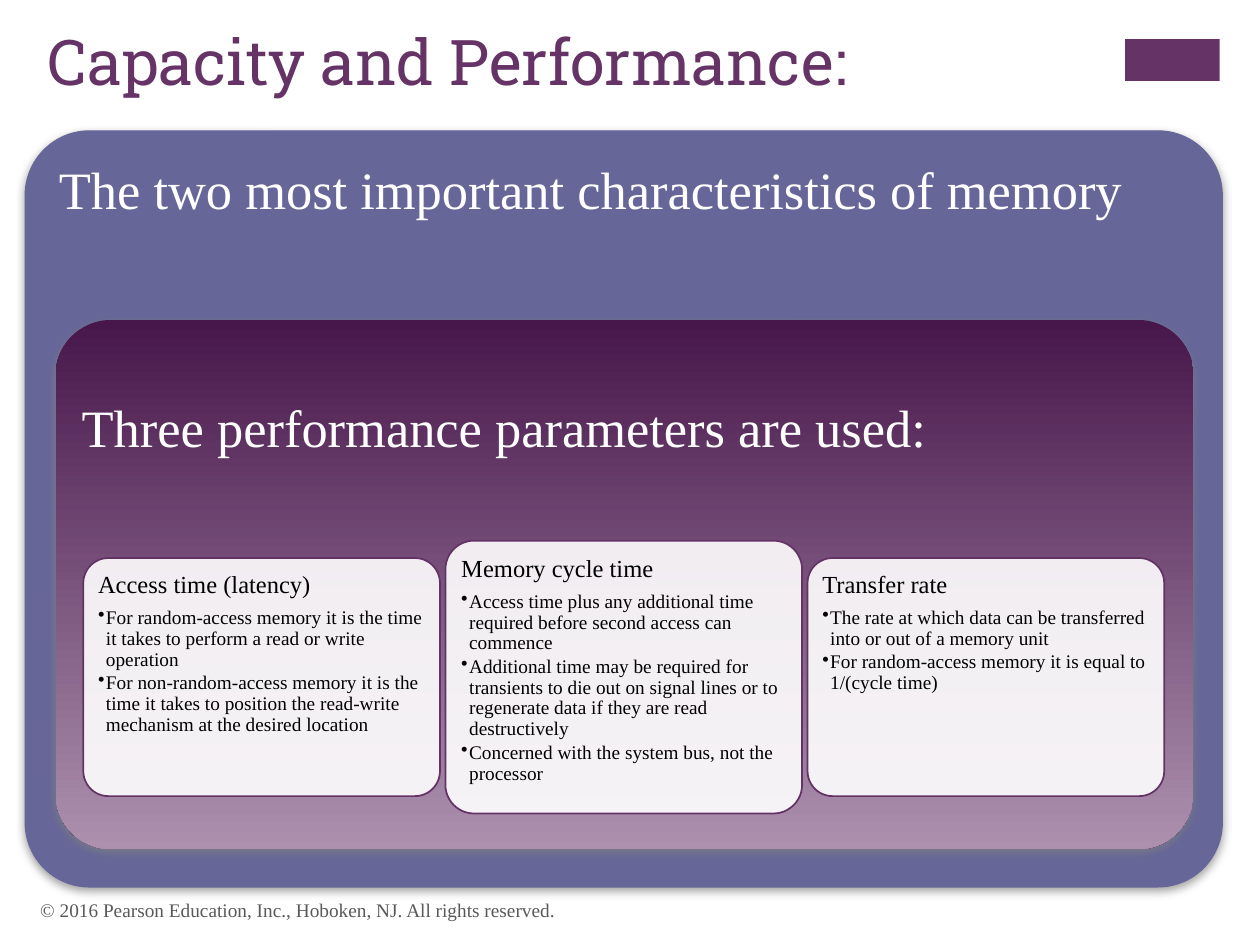
from typing import NamedTuple

from lxml.etree import SubElement
from pptx import Presentation
from pptx.dml.color import RGBColor
from pptx.enum.shapes import MSO_SHAPE
from pptx.enum.text import MSO_ANCHOR, MSO_AUTO_SIZE, PP_ALIGN
from pptx.oxml.ns import qn
from pptx.util import Cm, Pt

SERIF = "Times New Roman"
PURPLE = "663366"
CARD_LEFT, CARD_PITCH, CARD_WIDTH, CARD_MIDDLE = 1.68, 7.3, 7.19, 13.65


class Card(NamedTuple):
    heading: str
    points: list[str]
    height: float


CARDS = [
    Card("Access time (latency)", [
        "For random-access memory it is the time it takes to perform a read or write operation",
        "For non-random-access memory it is the time it takes to position the read-write "
        "mechanism at the desired location",
    ], 4.8),
    Card("Memory cycle time", [
        "Access time plus any additional time required before second access can commence",
        "Additional time may be required for transients to die out on signal lines or to "
        "regenerate data if they are read destructively",
        "Concerned with the system bus, not the processor",
    ], 5.5),
    Card("Transfer rate", [
        "The rate at which data can be transferred into or out of a memory unit",
        "For random-access memory it is equal to 1/(cycle time)",
    ], 4.8),
]


def rgb(value: str) -> RGBColor:
    return RGBColor.from_string(value)


def prepare_frame(frame, inset_x=0.25, inset_y=0.13, anchor=MSO_ANCHOR.TOP):
    frame.word_wrap = True
    frame.auto_size = MSO_AUTO_SIZE.NONE
    frame.vertical_anchor = anchor
    frame.margin_left = frame.margin_right = Cm(inset_x)
    frame.margin_top = Cm(inset_y)
    frame.margin_bottom = Cm(0.13)


def write(para, text, size, color, font=SERIF, line=None, before=None, bullet=False):
    para.alignment = PP_ALIGN.LEFT
    if line:
        para.line_spacing = line
    if before:
        para.space_before = Pt(before)
    if bullet:
        properties = para._p.get_or_add_pPr()
        properties.set("marL", str(Cm(0.16)))
        properties.set("indent", str(Cm(-0.16)))
        SubElement(properties, qn("a:buChar"), char="•")
    span = para.add_run()
    span.text = text
    span.font.size = Pt(size)
    span.font.name = font
    span.font.color.rgb = rgb(color)


def add_box(page, left, top, width, height, fill=None, line=None, line_width=1.0, corner=None):
    kind = MSO_SHAPE.RECTANGLE if corner is None else MSO_SHAPE.ROUNDED_RECTANGLE
    box = page.shapes.add_shape(kind, Cm(left), Cm(top), Cm(width), Cm(height))
    box.shadow.inherit = False
    if corner is not None:
        box.adjustments[0] = corner
    if fill:
        box.fill.solid()
        box.fill.fore_color.rgb = rgb(fill)
    if line:
        box.line.color.rgb = rgb(line)
        box.line.width = Pt(line_width)
    else:
        box.line.fill.background()
    return box


def add_drop_shadow(box):
    effects = box.element.spPr.find(qn("a:effectLst"))
    shadow = SubElement(effects, qn("a:outerShdw"), blurRad=str(Pt(5)), dist=str(Pt(2)),
                        dir="5400000", rotWithShape="0")
    color = SubElement(shadow, qn("a:srgbClr"), val="808080")
    SubElement(color, qn("a:alpha"), val="75000")


def add_card(page, index: int, card: Card):
    box = add_box(page, CARD_LEFT + index * CARD_PITCH, CARD_MIDDLE - card.height / 2,
                  CARD_WIDTH, card.height, fill="FFFFFF", line="643366", corner=0.105)
    color = box.element.spPr.find(qn("a:solidFill")).find(qn("a:srgbClr"))
    SubElement(color, qn("a:alpha"), val="90000")
    frame = box.text_frame
    prepare_frame(frame, 0.15, 0.15)
    write(frame.paragraphs[0], card.heading, 14, "000000", line=0.9)
    for number, point in enumerate(card.points):
        write(frame.add_paragraph(), point, 11, "000000", line=0.9,
              before=1.6 if number else 4.9, bullet=True)


def main():
    deck = Presentation()
    deck.slide_width, deck.slide_height = Cm(25.4), Cm(19.05)
    page = deck.slides.add_slide(deck.slide_layouts[5])

    add_box(page, 22.68, 0.79, 1.91, 0.84, fill=PURPLE)

    title = page.shapes.title
    title.left, title.top, title.width, title.height = Cm(0.71), Cm(0.33), Cm(20.98), Cm(3.1)
    prepare_frame(title.text_frame)
    write(title.text_frame.paragraphs[0], "Capacity and Performance:", 36, PURPLE,
          font="Roboto Slab")

    outer = add_box(page, 0.51, 2.64, 24.13, 15.24, fill="666699", line="666699",
                    line_width=0.75, corner=0.085)
    add_drop_shadow(outer)
    prepare_frame(outer.text_frame, 0.3, 0.3)
    write(outer.text_frame.paragraphs[0], "The two most important characteristics of memory",
          30, "FFFFFF", line=0.9)

    panel = add_box(page, 1.12, 6.45, 22.94, 10.67, corner=0.105)
    panel.fill.gradient()
    panel.fill.gradient_angle = 270
    for stop, color in zip(panel.fill.gradient_stops, ("47174B", "AC90AE")):
        stop.color.rgb = rgb(color)
    add_drop_shadow(panel)
    prepare_frame(panel.text_frame, 0.2, 1.32)
    write(panel.text_frame.paragraphs[0], "Three performance parameters are used:",
          30, "FFFFFF", line=0.9)

    for index, card in enumerate(CARDS):
        add_card(page, index, card)

    footer = page.shapes.add_textbox(Cm(0.56), Cm(17.83), Cm(17.02), Cm(1.02))
    prepare_frame(footer.text_frame, anchor=MSO_ANCHOR.MIDDLE)
    write(footer.text_frame.paragraphs[0],
          "© 2016 Pearson Education, Inc., Hoboken, NJ. All rights reserved.", 11, "595959")

    deck.save("out.pptx")


if __name__ == "__main__":
    main()
